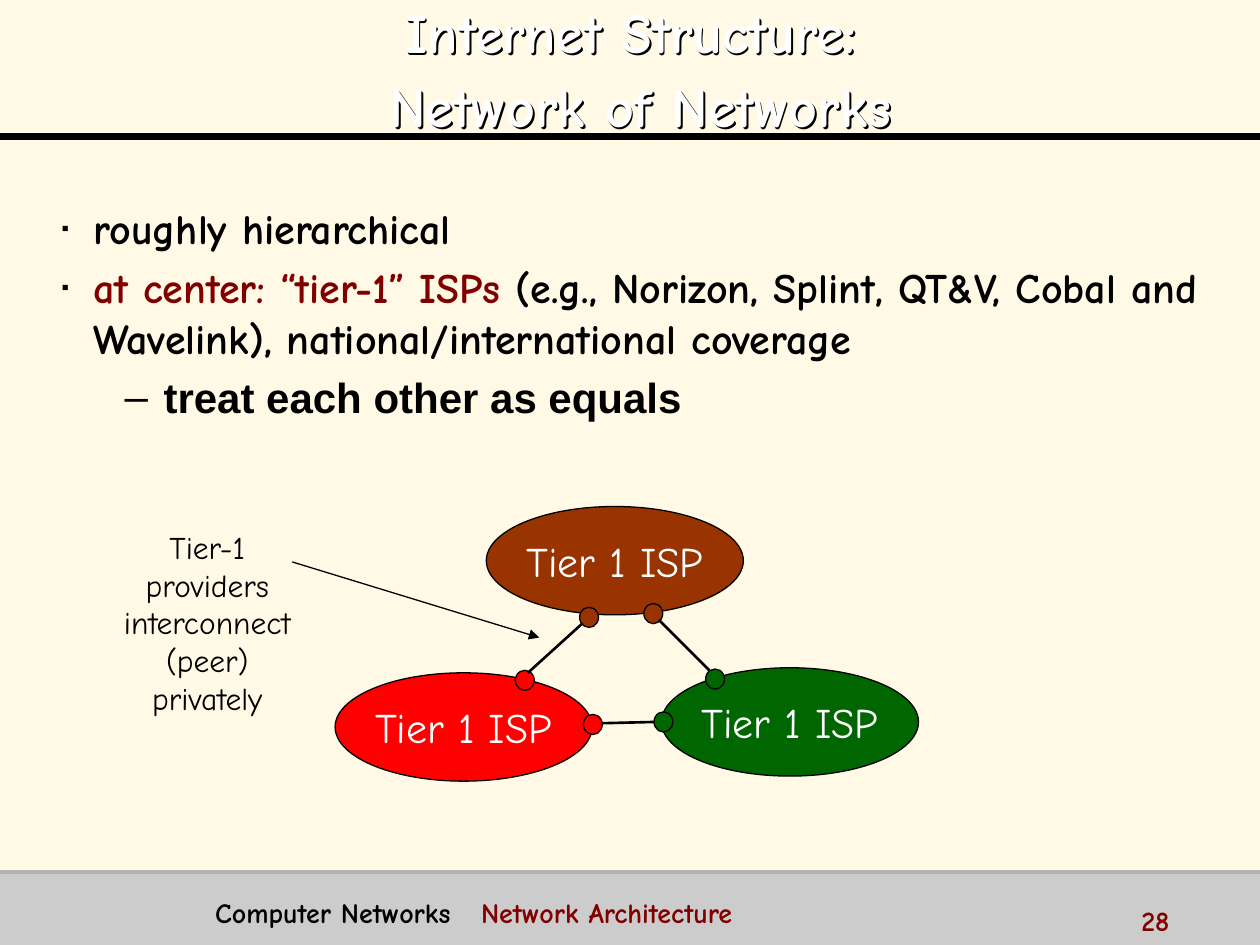
from lxml import etree
from pptx import Presentation
from pptx import util as u
from pptx.dml.color import RGBColor
from pptx.enum import shapes, text
from pptx.oxml import ns

Inches, Pt = u.Inches, u.Pt
CREAM = RGBColor(0xFF, 0xF9, 0xE6)
GRAY = RGBColor(0xCC, 0xCC, 0xCC)
RULE_GRAY = RGBColor(0xB2, 0xB2, 0xB2)
BLACK = RGBColor(0, 0, 0)
WHITE = RGBColor(0xFF, 0xFF, 0xFF)
MAROON = RGBColor(0x80, 0, 0)
RED = RGBColor(0xFF, 0, 0)
BROWN = RGBColor(0x99, 0x33, 0)
GREEN = RGBColor(0, 0x66, 0)
COMIC = "Comic Neue"
CENTER = text.PP_ALIGN.CENTER
MIDDLE = text.MSO_ANCHOR.MIDDLE


def add_run(paragraph, words, color, size, bold=False, name=COMIC):
    run = paragraph.add_run()
    run.text = words
    run.font.color.rgb = color
    formats = {"size": Pt(size), "bold": bold, "name": name}
    for key, value in formats.items():
        setattr(run.font, key, value)


def add_child(parent, tag, **attributes):
    return etree.SubElement(parent, ns.qn(tag), attributes)


presentation = Presentation()
presentation.slide_width = Inches(10)
presentation.slide_height = Inches(7.5)
slide = presentation.slides.add_slide(presentation.slide_layouts[6])
slide.background.fill.solid()
slide.background.fill.fore_color.rgb = CREAM

# Footer band, ISP ellipses and peering points
band = (0, 6.92, 10, 0.58, GRAY, "")
isps = [(left, top, 2.04, 0.86, color, "Tier 1 ISP") for left, top, color in (
    (2.66, 5.34, RED), (3.86, 4.02, BROWN), (5.25, 5.3, GREEN))]
points = [(left, top, 0.15, 0.16, color, "") for left, top, color in (
    (5.6, 5.31, GREEN), (5.11, 4.79, BROWN), (4.6, 4.82, BROWN),
    (4.09, 5.32, RED), (4.63, 5.67, RED), (5.19, 5.65, GREEN))]
for left, top, width, height, color, label in [band] + isps + points:
    is_band = color == GRAY
    preset = shapes.MSO_SHAPE.RECTANGLE if is_band else shapes.MSO_SHAPE.OVAL
    shape = slide.shapes.add_shape(
        preset, Inches(left), Inches(top), Inches(width), Inches(height))
    shape.shadow.inherit = False
    shape.fill.solid()
    shape.fill.fore_color.rgb = color
    if is_band:
        shape.line.fill.background()
    else:
        shape.line.color.rgb = BLACK
        shape.line.width = Pt(0.75)
    if label:
        shape.text_frame.word_wrap = False
        shape.text_frame.vertical_anchor = MIDDLE
        paragraph = shape.text_frame.paragraphs[0]
        paragraph.alignment = CENTER
        add_run(paragraph, label, WHITE, 24)

# Title and footer rules, peering links, and the arrow from the note
for x1, y1, x2, y2, color, width, has_arrow in (
        (0, 1.08, 10, 1.08, BLACK, 4, False),
        (0, 6.92, 10, 6.92, RULE_GRAY, 2, False),
        (4.78, 5.74, 5.19, 5.73, BLACK, 1.5, False),
        (5.23, 4.92, 5.63, 5.32, BLACK, 1.5, False),
        (4.19, 5.34, 4.62, 4.95, BLACK, 1.5, False),
        (2.32, 4.46, 4.28, 5.06, BLACK, 0.75, True)):
    connector = slide.shapes.add_connector(
        shapes.MSO_CONNECTOR.STRAIGHT,
        Inches(x1), Inches(y1), Inches(x2), Inches(y2))
    connector.line.color.rgb = color
    connector.line.width = Pt(width)
    if has_arrow:
        add_child(connector.line._get_or_add_ln(), "a:tailEnd", type="triangle")
    add_child(connector._element.spPr, "a:effectLst")

# Text boxes
boxes = {}
for part, left, top, width, height in (
        ("title", 0.58, -0.11, 8.85, 1.25),
        ("body", 0.39, 1.56, 9.23, 5.08),
        ("note", 0.79, 4.14, 1.71, 1.6),
        ("footer", 1.61, 7.06, 7.2, 0.31),
        ("number", 8.96, 7.12, 1, 0.25)):
    boxes[part] = slide.shapes.add_textbox(
        Inches(left), Inches(top), Inches(width), Inches(height))
    boxes[part].text_frame.word_wrap = True

# Title: an unfilled box, so its shadow falls from the letters
title = boxes["title"]
title.fill.background()
title.line.fill.background()
effects = add_child(title._element.spPr, "a:effectLst")
shadow = add_child(effects, "a:outerShdw", dist=str(Pt(1.5)), dir="2700000",
                   algn="tl", rotWithShape="0")
add_child(shadow, "a:srgbClr", val=str(BLACK))
title.text_frame.vertical_anchor = MIDDLE
paragraph = title.text_frame.paragraphs[0]
paragraph.alignment = CENTER
paragraph.line_spacing = 1.1
add_run(paragraph, "Internet Structure:", WHITE, 32, True)
paragraph.add_line_break()
add_run(paragraph, " Network of Networks", WHITE, 32, True)

# Bulleted body
bullets = (
    (0, 0.25, -0.25, "▪", COMIC, [("roughly hierarchical", BLACK)]),
    (0, 0.25, -0.25, "▪", COMIC, [
        ("at center: “tier-1” ISPs ", MAROON),
        ("(e.g., Norizon, Splint, QT&V, Cobal and Wavelink), "
         "national/international coverage", BLACK)]),
    (1, 0.81, -0.31, "–", "Arial", [("treat each other as equals", BLACK)]),
)
body = boxes["body"].text_frame
for index, (level, margin, indent, mark, name, runs) in enumerate(bullets):
    paragraph = body.add_paragraph() if index else body.paragraphs[0]
    paragraph.level = level
    if index:
        paragraph.space_before = Pt(5)
    properties = paragraph._p.get_or_add_pPr()
    properties.set("marL", str(Inches(margin)))
    properties.set("indent", str(Inches(indent)))
    add_child(add_child(properties, "a:buClr"), "a:srgbClr", val=str(BLACK))
    if level == 0:
        add_child(properties, "a:buSzPct", val="50000")
    add_child(properties, "a:buFont", typeface="Arial")
    add_child(properties, "a:buChar", char=mark)
    for words, color in runs:
        add_run(paragraph, words, color, 24, True, name)

# Note beside the diagram
paragraph = boxes["note"].text_frame.paragraphs[0]
paragraph.alignment = CENTER
add_run(paragraph, "Tier-1 providers interconnect (peer) privately", BLACK, 18)

# Footer, its two parts set apart by a tab stop, and slide number
paragraph = boxes["footer"].text_frame.paragraphs[0]
tabs = add_child(paragraph._p.get_or_add_pPr(), "a:tabLst")
add_child(tabs, "a:tab", pos=str(Inches(2.11)), algn="l")
add_run(paragraph, "Computer Networks\t", BLACK, 16, True)
add_run(paragraph, "Network Architecture", MAROON, 16, True)
paragraph = boxes["number"].text_frame.paragraphs[0]
add_run(paragraph, "28", MAROON, 16, True)

presentation.save("out.pptx")
